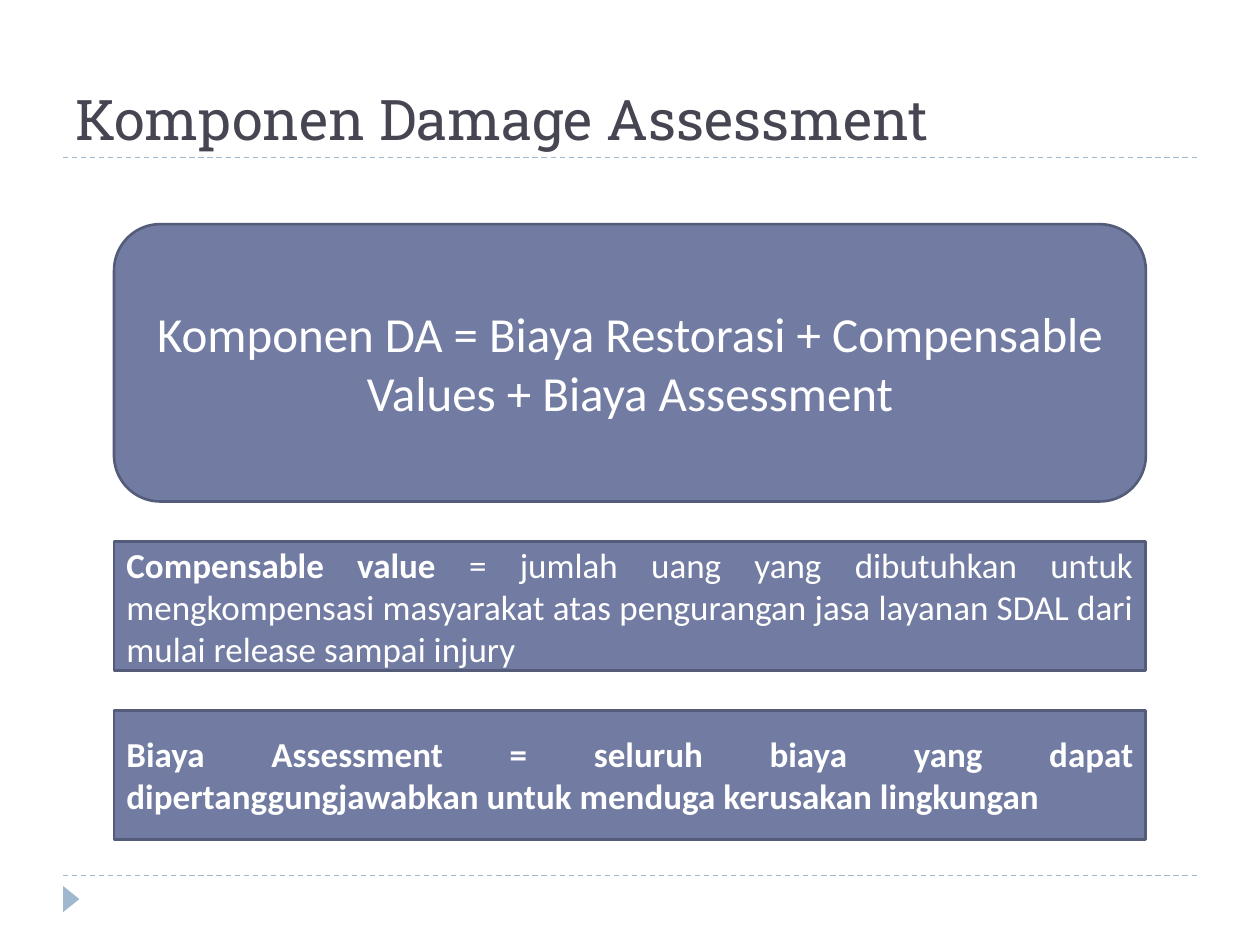
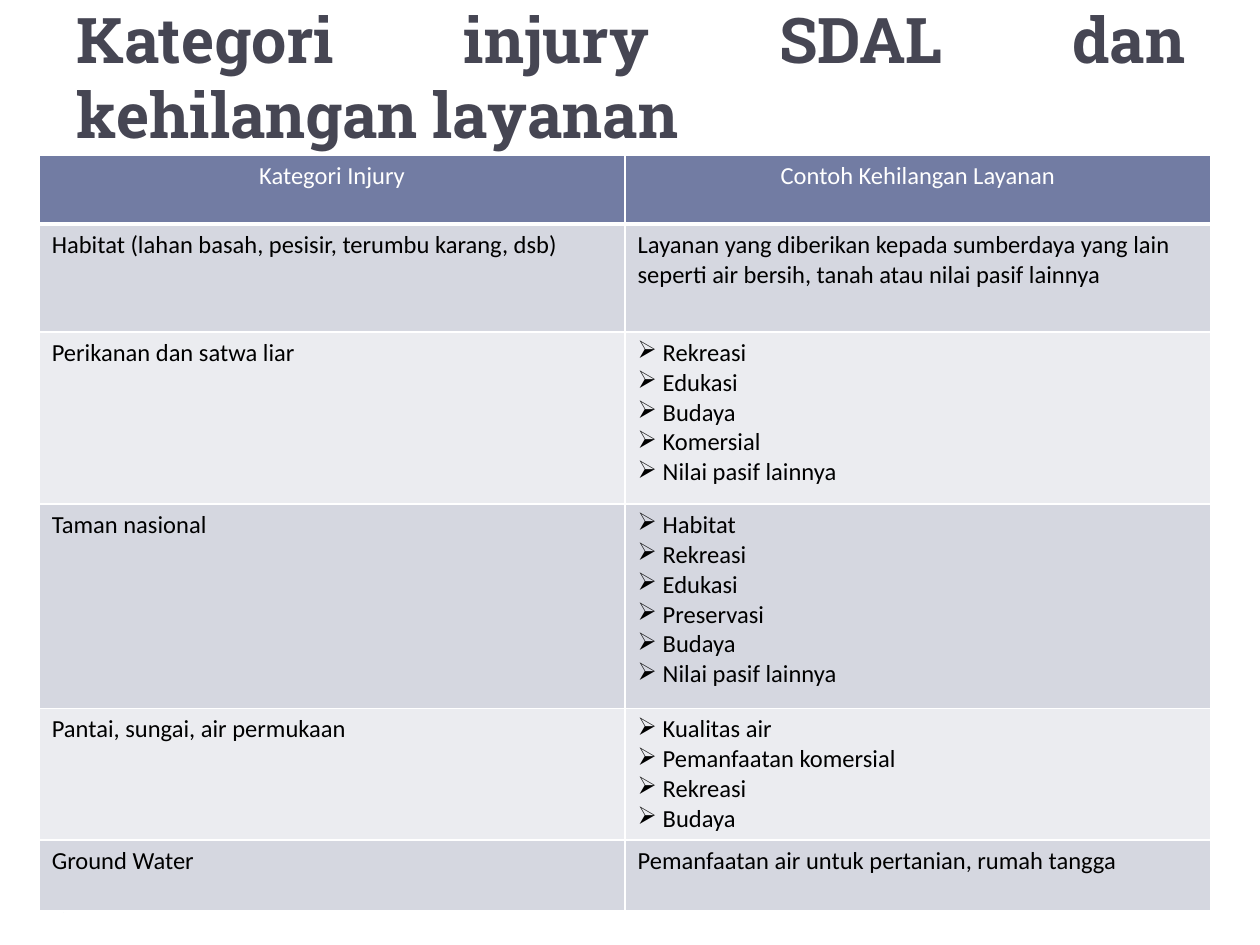
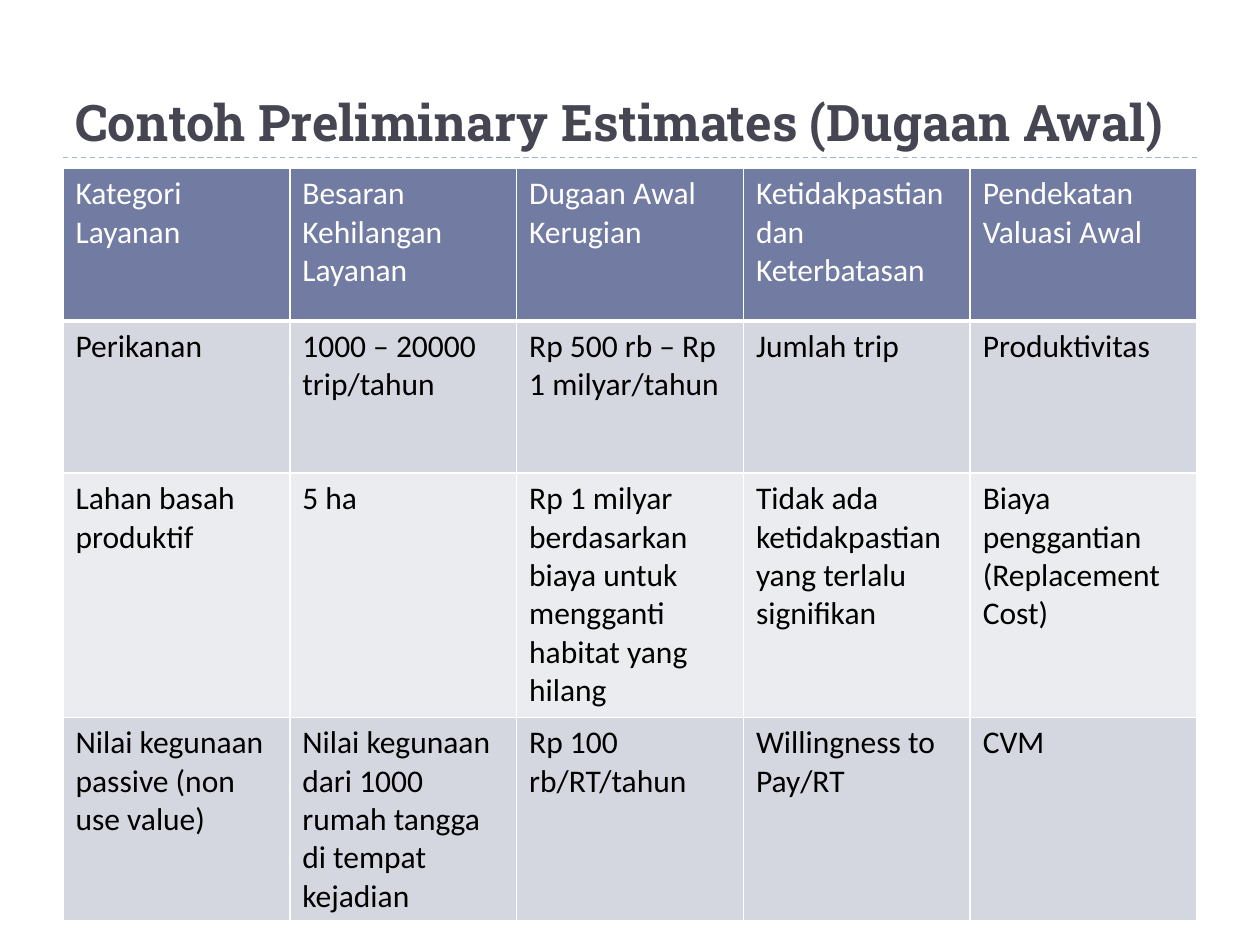
import pptx
import pptx.util
import pptx.dml.color
import pptx.enum.dml
import pptx.enum.shapes
import pptx.enum.text
import pptx.oxml
import pptx.oxml.ns

Cm = pptx.util.Cm
Pt = pptx.util.Pt
Shape = pptx.enum.shapes.MSO_SHAPE
Align = pptx.enum.text.PP_ALIGN
Anchor = pptx.enum.text.MSO_ANCHOR

INK = "464653"
ACCENT = "727CA3"
EDGE = "545C79"
RULE = "9FB8CD"
WHITE = "FFFFFF"
BLACK = "000000"
BANDS = ["EBECF0", "D5D7E0"]
BULLET = "➢"


def paint(target, colour):
    if hasattr(target, "solid"):
        target.solid()
        target = target.fore_color
    target.rgb = pptx.dml.color.RGBColor.from_string(colour)


def write(para, spans, colour, align, values):
    para.alignment = align
    for text, bold in spans:
        span = para.add_run()
        span.text = text
        for name, value in {**values, "bold": bold}.items():
            setattr(span.font, name, value)
        paint(span.font.fill, colour)


deck = pptx.Presentation()
deck.slide_width = Cm(25.4)
deck.slide_height = Cm(19.05)

titles = [
    ("Komponen Damage Assessment", 32, False, Align.LEFT, 1.27, 0.43, 2.75),
    ("Kategori injury SDAL dan kehilangan layanan", 36, True, Align.JUSTIFY, 1.3, 0, 3.18),
    ("Contoh Preliminary Estimates (Dugaan Awal)", 28.8, True, Align.JUSTIFY, 1.27, 0.43, 2.75),
]
pages = []
for text, size, bold, align, left, top, height in titles:
    page = deck.slides.add_slide(deck.slide_layouts[6])
    pages.append(page)
    paint(page.background.fill, WHITE)
    for rule_top in (17.65, 3.18):
        rule = page.shapes.add_connector(
            pptx.enum.shapes.MSO_CONNECTOR.STRAIGHT,
            Cm(1.27), Cm(rule_top), Cm(24.13), Cm(rule_top))
        paint(rule.line.fill, RULE)
        rule.line.width = Pt(0.75)
        rule.line.dash_style = pptx.enum.dml.MSO_LINE.DASH
        pptx.oxml.ns.qn("a:effectLst")
        rule._element.spPr.append(pptx.oxml.parse_xml(
            f"<a:effectLst {pptx.oxml.ns.nsdecls('a')}/>"))
    marker = page.shapes.add_shape(
        Shape.ISOSCELES_TRIANGLE, Cm(1.17), Cm(17.96), Cm(0.53), Cm(0.33))
    marker.rotation = 90
    marker.shadow.inherit = False
    paint(marker.fill, RULE)
    marker.line.fill.background()
    box = page.shapes.add_textbox(Cm(left), Cm(top), Cm(22.86), Cm(height))
    box.text_frame.word_wrap = True
    box.text_frame.vertical_anchor = Anchor.BOTTOM
    write(box.text_frame.paragraphs[0], [(text, bold)], INK, align,
          {"name": "Roboto Slab", "size": Pt(size)})

panels = [
    (Shape.ROUNDED_RECTANGLE, 4.52, 5.59, 28, Align.CENTER,
     [("Komponen DA = Biaya Restorasi + Compensable Values + Biaya Assessment", False)]),
    (Shape.RECTANGLE, 10.92, 2.6, 20, Align.JUSTIFY,
     [("Compensable value", True),
      (" = jumlah uang yang dibutuhkan untuk mengkompensasi masyarakat atas "
       "pengurangan jasa layanan SDAL dari mulai release sampai injury", False)]),
    (Shape.RECTANGLE, 14.32, 2.6, 20, Align.JUSTIFY,
     [("Biaya Assessment = seluruh biaya yang dapat dipertanggungjawabkan "
       "untuk menduga kerusakan lingkungan", True)]),
]
for outline, top, height, size, align, spans in panels:
    panel = pages[0].shapes.add_shape(outline, Cm(2.3), Cm(top), Cm(20.8), Cm(height))
    panel.shadow.inherit = False
    paint(panel.fill, ACCENT)
    paint(panel.line.fill, EDGE)
    panel.line.width = Pt(1.5)
    panel.text_frame.word_wrap = True
    panel.text_frame.vertical_anchor = Anchor.MIDDLE
    write(panel.text_frame.paragraphs[0], spans, WHITE, align,
          {"name": "Calibri", "size": Pt(size)})

injury_rows = [
    ["Kategori Injury", "Contoh Kehilangan Layanan"],
    ["Habitat (lahan basah, pesisir, terumbu karang, dsb)",
     "Layanan yang diberikan kepada sumberdaya yang lain seperti air bersih, "
     "tanah atau nilai pasif lainnya"],
    ["Perikanan dan satwa liar",
     ["Rekreasi", "Edukasi", "Budaya", "Komersial", "Nilai pasif lainnya"]],
    ["Taman nasional",
     ["Habitat", "Rekreasi", "Edukasi", "Preservasi", "Budaya", "Nilai pasif lainnya"]],
    ["Pantai, sungai, air permukaan",
     ["Kualitas air", "Pemanfaatan komersial", "Rekreasi", "Budaya"]],
    ["Ground Water", "Pemanfaatan air untuk pertanian, rumah tangga"],
]
estimate_rows = [
    ["Kategori Layanan", "Besaran Kehilangan Layanan", "Dugaan Awal Kerugian",
     "Ketidakpastian dan Keterbatasan", "Pendekatan Valuasi Awal"],
    ["Perikanan", "1000 – 20000 trip/tahun", "Rp 500 rb – Rp 1 milyar/tahun",
     "Jumlah trip", "Produktivitas"],
    ["Lahan basah produktif", "5 ha",
     "Rp 1 milyar berdasarkan biaya untuk mengganti habitat yang hilang",
     "Tidak ada ketidakpastian yang terlalu signifikan",
     "Biaya penggantian (Replacement Cost)"],
    ["Nilai kegunaan passive (non use value)",
     "Nilai kegunaan dari 1000 rumah tangga di tempat kejadian",
     "Rp 100 rb/RT/tahun", "Willingness to Pay/RT", "CVM"],
]
tables = [
    (pages[1], injury_rows, 0.79, 3.12, 23.62, [1.4, 2.17, 3.47, 4.12, 2.65, 1.44],
     14, Align.CENTER),
    (pages[2], estimate_rows, 1.27, 3.4, 22.86, [3.07, 3.07, 4.92, 4.1],
     18, Align.LEFT),
]
for page, rows, left, top, width, heights, size, header_align in tables:
    table = page.shapes.add_table(
        len(rows), len(rows[0]), Cm(left), Cm(top), Cm(width), Cm(sum(heights))).table
    for column in table.columns:
        column.width = Cm(width / len(rows[0]))
    for row_index, row in enumerate(rows):
        table.rows[row_index].height = Cm(heights[row_index])
        header = row_index == 0
        for column_index, content in enumerate(row):
            cell = table.cell(row_index, column_index)
            paint(cell.fill, ACCENT if header else BANDS[row_index % 2])
            properties = cell._tc.get_or_add_tcPr()
            for position, side in enumerate("LRTB"):
                points = 3 if header and side == "B" else 1
                properties.insert(position, pptx.oxml.parse_xml(
                    f'<a:ln{side} {pptx.oxml.ns.nsdecls("a")} w="{Pt(points)}">'
                    f'<a:solidFill><a:srgbClr val="{WHITE}"/></a:solidFill></a:ln{side}>'))
            bulleted = isinstance(content, list)
            for line_index, line in enumerate(content if bulleted else [content]):
                frame = cell.text_frame
                para = frame.add_paragraph() if line_index else frame.paragraphs[0]
                write(para, [(" " + line if bulleted else line, False)],
                      WHITE if header else BLACK,
                      header_align if header else Align.LEFT,
                      {"name": "Calibri", "size": Pt(size)})
                if bulleted:
                    para._p.get_or_add_pPr().append(pptx.oxml.parse_xml(
                        f'<a:buChar {pptx.oxml.ns.nsdecls("a")} char="{BULLET}"/>'))

deck.save("out.pptx")
